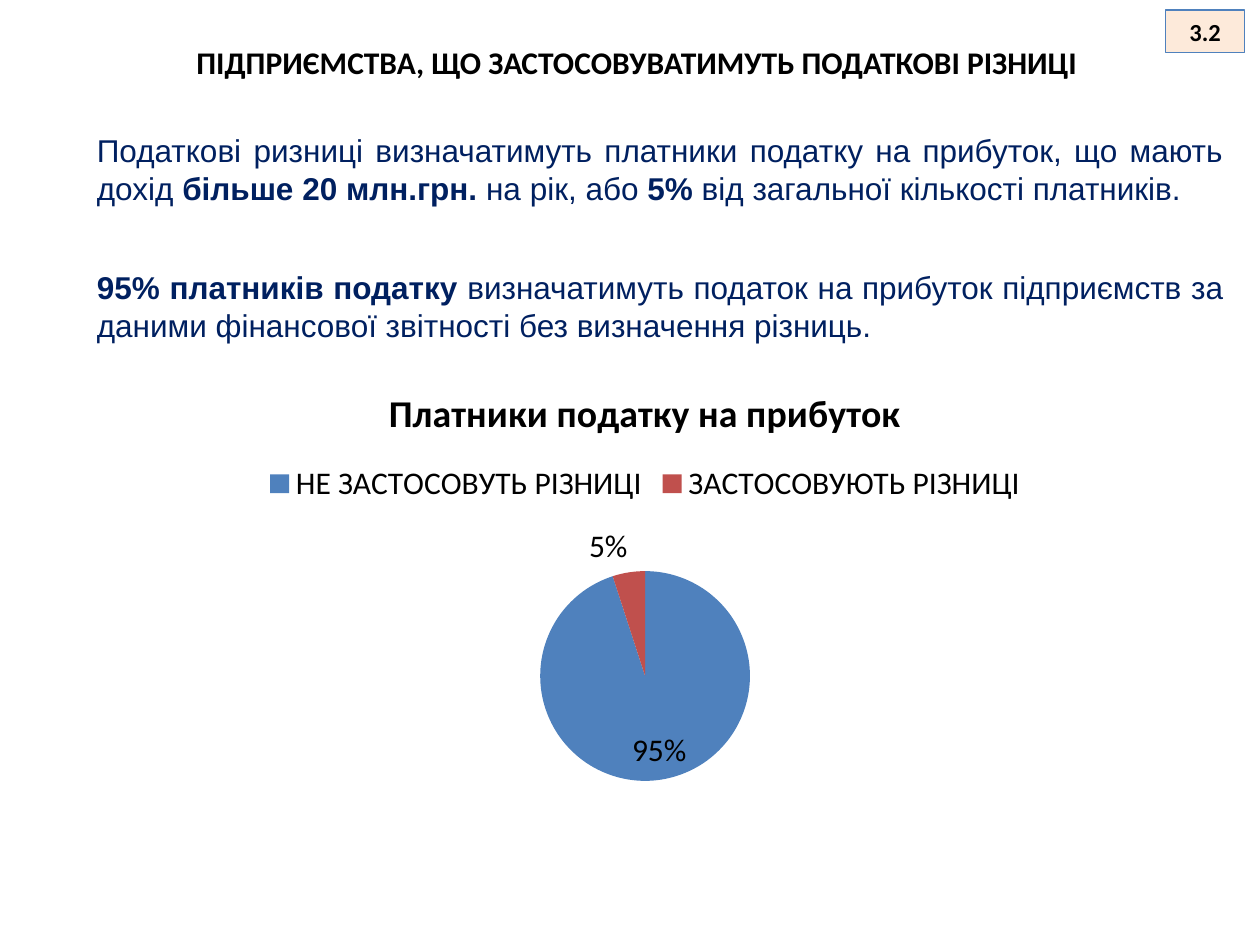
from pptx import Presentation
from pptx.chart.data import CategoryChartData
from pptx.dml.color import RGBColor
from pptx.enum.chart import XL_CHART_TYPE, XL_LABEL_POSITION, XL_LEGEND_POSITION
from pptx.enum.shapes import MSO_SHAPE
from pptx.enum.text import MSO_ANCHOR, PP_ALIGN
from pptx.util import Inches, Pt

PIE = XL_CHART_TYPE.PIE
BEST_FIT = XL_LABEL_POSITION.BEST_FIT
LEGEND_TOP = XL_LEGEND_POSITION.TOP
RECTANGLE = MSO_SHAPE.RECTANGLE
MIDDLE = MSO_ANCHOR.MIDDLE
CENTER = PP_ALIGN.CENTER
JUSTIFY = PP_ALIGN.JUSTIFY

BLACK = RGBColor(0x00, 0x00, 0x00)
NAVY = RGBColor(0x00, 0x20, 0x60)
BLUE = RGBColor(0x4F, 0x81, 0xBD)
RED = RGBColor(0xC0, 0x50, 0x4D)
PEACH = RGBColor(0xFD, 0xEA, 0xDA)

HEADING = "ПІДПРИЄМСТВА, ЩО ЗАСТОСОВУВАТИМУТЬ ПОДАТКОВІ РІЗНИЦІ"
CHART_TITLE = "Платники податку на прибуток"
STATEMENTS = [
    [
        ("Податкові ризниці визначатимуть платники податку на прибуток, що мають дохід ", False),
        ("більше 20 млн.грн. ", True),
        ("на рік, або ", False),
        ("5%", True),
        (" від загальної кількості платників. ", False),
    ],
    [
        ("95% платників податку ", True),
        ("визначатимуть податок на прибуток підприємств за даними "
         "фінансової звітності без визначення різниць.", False),
    ],
]
PAYER_SHARES = [
    ("НЕ ЗАСТОСОВУТЬ РІЗНИЦІ", 95, BLUE),
    ("ЗАСТОСОВУЮТЬ РІЗНИЦІ", 5, RED),
]


def format_font(font, name, size, color, bold=False):
    font.name = name
    font.size = Pt(size)
    font.color.rgb = color
    font.bold = bold


def add_heading(slide, box):
    text_frame = slide.shapes.add_textbox(*box).text_frame
    text_frame.word_wrap = True
    text_frame.text = HEADING
    format_font(text_frame.paragraphs[0].runs[0].font, "Calibri", 18, BLACK, True)


def add_statements(slide, box):
    text_frame = slide.shapes.add_textbox(*box).text_frame
    text_frame.word_wrap = True
    text_frame.margin_top = Inches(0.44)
    for index, statement in enumerate(STATEMENTS):
        paragraph = text_frame.add_paragraph() if index else text_frame.paragraphs[0]
        paragraph.alignment = JUSTIFY
        paragraph.space_before = Pt(35 if index else 0)
        properties = paragraph._p.get_or_add_pPr()
        properties.set("marL", str(Inches(0.47)))
        properties.set("indent", "0")
        for text, bold in statement:
            run = paragraph.add_run()
            run.text = text
            format_font(run.font, "Arial", 18, NAVY, bold)


def add_payer_chart(slide, box):
    chart_data = CategoryChartData()
    chart_data.categories = [name for name, _, _ in PAYER_SHARES]
    chart_data.add_series(CHART_TITLE, [share for _, share, _ in PAYER_SHARES])
    chart = slide.shapes.add_chart(PIE, *box, chart_data).chart
    format_font(chart.font, "Calibri", 18, BLACK)

    chart.has_title = True
    title_frame = chart.chart_title.text_frame
    title_frame.text = CHART_TITLE
    format_font(title_frame.paragraphs[0].runs[0].font, "Calibri", 21.6, BLACK, True)
    chart.chart_title.include_in_layout = False

    chart.has_legend = True
    chart.legend.position = LEGEND_TOP
    chart.legend.include_in_layout = False

    plot = chart.plots[0]
    plot.vary_by_categories = True
    for index, (_, _, color) in enumerate(PAYER_SHARES):
        fill = plot.series[0].points[index].format.fill
        fill.solid()
        fill.fore_color.rgb = color

    plot.has_data_labels = True
    labels = plot.data_labels
    labels.show_percentage = True
    labels.show_value = False
    labels.number_format = "0%"
    labels.number_format_is_linked = False
    labels.position = BEST_FIT


def add_section_number(slide, box):
    shape = slide.shapes.add_shape(RECTANGLE, *box)
    shape.shadow.inherit = False
    shape.fill.solid()
    shape.fill.fore_color.rgb = PEACH
    shape.line.color.rgb = BLUE
    shape.line.width = Pt(0.75)
    text_frame = shape.text_frame
    text_frame.vertical_anchor = MIDDLE
    text_frame.text = "3.2"
    paragraph = text_frame.paragraphs[0]
    paragraph.alignment = CENTER
    format_font(paragraph.runs[0].font, "Calibri", 14, BLACK, True)


def main():
    presentation = Presentation()
    presentation.slide_width = Inches(10)
    presentation.slide_height = Inches(7.5)
    slide = presentation.slides.add_slide(presentation.slide_layouts[6])
    regions = [
        (add_statements, (0.2, 0.6, 9.61, 2.17)),
        (add_payer_chart, (0.59, 2.88, 9.06, 3.81)),
        (add_heading, (1.46, 0.29, 7.48, 0.4)),
        (add_section_number, (9.25, 0.08, 0.63, 0.34)),
    ]
    for add_region, box in regions:
        add_region(slide, [Inches(length) for length in box])
    presentation.save("out.pptx")


if __name__ == "__main__":
    main()
